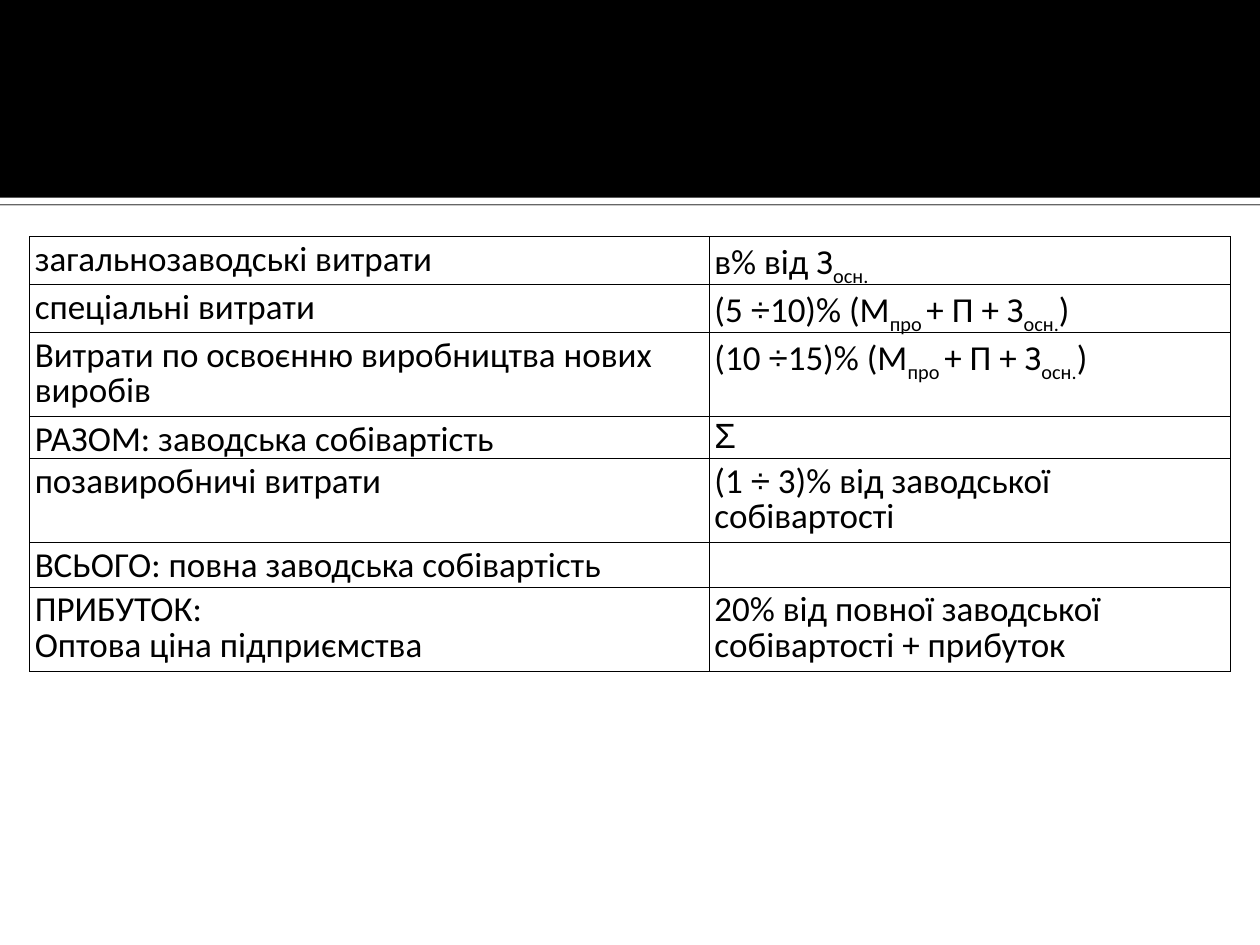
from lxml.etree import SubElement
from pptx import Presentation
from pptx.dml.color import RGBColor
from pptx.enum.shapes import MSO_SHAPE as Shape
from pptx.oxml.ns import qn
from pptx.util import Pt

BLACK, WHITE = "000000", "FFFFFF"
SLIDE_WIDTH, SLIDE_HEIGHT = 720, 540
BAND_HEIGHT = 113
COLUMN_WIDTHS = [388.4, 297.8]
ROW_HEIGHTS = [27.4, 27.4, 48, 24, 48, 23.6, 48.2]
THIN, THICK = 0.45, 0.75
THICK_BELOW = {2, 4, 5}  # rows closed by a thicker rule
SUBSCRIPT = {"осн.", "про "}
SYMBOLS = {"÷", "Σ"}

COST_BASE = ["про ", "+ П + З", "осн.", ")"]
# Each cell is a list of paragraphs, each paragraph a list of runs
ROWS = [
    ([["загальнозаводські витрати"]], [["в% від З", "осн."]]),
    ([["спеціальні витрати"]], [["(5 ", "÷", "10)% (М", *COST_BASE]]),
    ([["Витрати по освоєнню виробництва нових виробів"]],
     [["(10 ", "÷", "15)% (М", *COST_BASE]]),
    ([["РАЗОМ: заводська собівартість"]], [["Σ"]]),
    ([["позавиробничі витрати"]],
     [["(1 ", "÷", " 3)% від заводської собівартості"]]),
    ([["ВСЬОГО: повна заводська собівартість"]], [[]]),
    ([["ПРИБУТОК:"], ["Оптова ціна підприємства"]],
     [["20% від повної заводської собівартості + прибуток"]]),
]


def color(value):
    return RGBColor.from_string(value)


def add_bar(page, top, height, fill):
    bar = page.shapes.add_shape(Shape.RECTANGLE, 0, Pt(top), Pt(SLIDE_WIDTH), Pt(height))
    bar.shadow.inherit = False
    bar.fill.solid()
    bar.fill.fore_color.rgb = color(fill)
    bar.line.fill.background()
    return bar


def add_shadow(shape, distance, opacity):
    """Cast a sharp black shadow straight down."""
    effects = shape._element.spPr.find(qn("a:effectLst"))
    shadow = SubElement(effects, qn("a:outerShdw"), blurRad="0", dist=str(Pt(distance)),
                        dir="5400000", algn="tl", rotWithShape="0")
    tint = SubElement(shadow, qn("a:srgbClr"), val=BLACK)
    SubElement(tint, qn("a:alpha"), val=str(opacity * 1000))


def add_run(para, text):
    span = para.add_run()
    span.text = text
    span.font.size = Pt(20)
    span.font.name = "Arial" if text in SYMBOLS else "Calibri"
    span.font.color.rgb = color(BLACK)
    if text in SUBSCRIPT:
        span._r.get_or_add_rPr().set("baseline", "-25000")


def set_borders(cell, top, bottom):
    props = cell._tc.get_or_add_tcPr()
    widths = {"a:lnL": THIN, "a:lnR": THIN, "a:lnT": top, "a:lnB": bottom}
    for index, (tag, width) in enumerate(widths.items()):
        line = SubElement(props, qn(tag), w=str(Pt(width)))
        SubElement(SubElement(line, qn("a:solidFill")), qn("a:srgbClr"), val=BLACK)
        props.insert(index, line)  # borders precede the fill


def fill_cell(cell, paragraphs):
    is_sum = paragraphs == [["Σ"]]
    cell.fill.background()
    cell.margin_left = cell.margin_right = Pt(3)
    cell.margin_top = Pt(0.7 if is_sum else 3.6)
    cell.margin_bottom = 0
    frame = cell.text_frame
    for index, runs in enumerate(paragraphs):
        para = frame.add_paragraph() if index else frame.paragraphs[0]
        para.line_spacing = 0.98 if is_sum else 0.83
        for text in runs:
            add_run(para, text)


def add_cost_table(page, left, top):
    table = page.shapes.add_table(
        len(ROWS), len(COLUMN_WIDTHS), Pt(left), Pt(top),
        Pt(sum(COLUMN_WIDTHS)), Pt(sum(ROW_HEIGHTS))).table
    table.first_row = table.horz_banding = False
    for column, width in zip(table.columns, COLUMN_WIDTHS):
        column.width = Pt(width)
    for index, (row, height, contents) in enumerate(zip(table.rows, ROW_HEIGHTS, ROWS)):
        row.height = Pt(height)
        above = THICK if index - 1 in THICK_BELOW else THIN
        below = THICK if index in THICK_BELOW else THIN
        for cell, paragraphs in zip(row.cells, contents):
            fill_cell(cell, paragraphs)
            set_borders(cell, above, below)


def main():
    deck = Presentation()
    deck.slide_width, deck.slide_height = Pt(SLIDE_WIDTH), Pt(SLIDE_HEIGHT)
    page = deck.slides.add_slide(deck.slide_layouts[6])

    # Header band with a shadowed white edge
    edge = add_bar(page, BAND_HEIGHT, 3.6, WHITE)
    add_shadow(edge, 0.8, 60)
    add_bar(page, 0, BAND_HEIGHT, BLACK)

    # Cost breakdown
    add_cost_table(page, 16.9, 135.2)
    deck.save("out.pptx")


if __name__ == "__main__":
    main()
